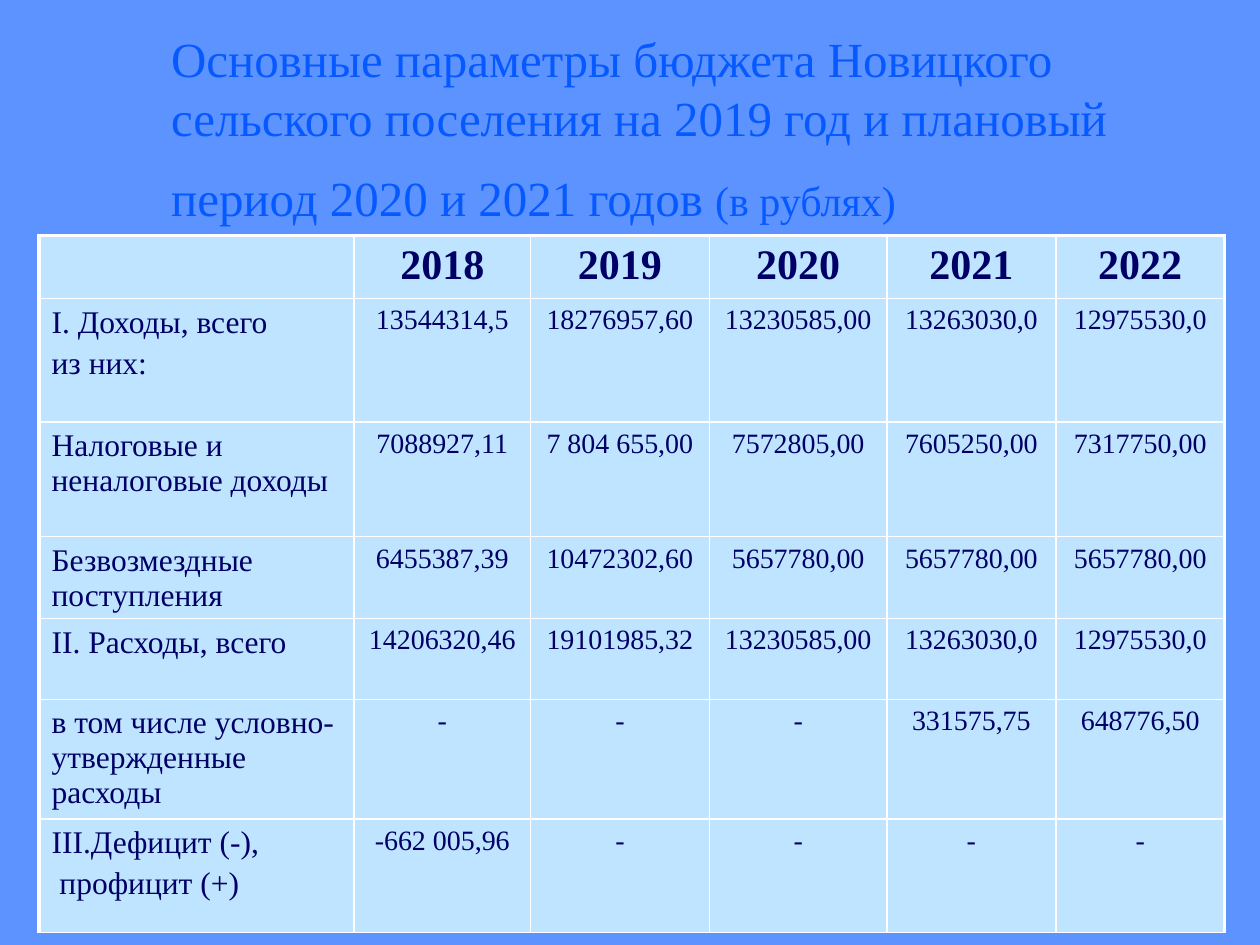
from pptx import Presentation
from pptx.dml.color import RGBColor
from pptx.enum.text import MSO_ANCHOR, PP_ALIGN
from pptx.oxml.ns import qn
from pptx.util import Inches, Pt
from lxml import etree

MIDDLE = MSO_ANCHOR.MIDDLE
LEFT, CENTER = PP_ALIGN.LEFT, PP_ALIGN.CENTER

THEME = {
    "font": "Times New Roman",
    "background": RGBColor.from_string("5D93FF"),
    "title": RGBColor.from_string("0659FF"),
    "text": RGBColor.from_string("000066"),
    "cell": RGBColor.from_string("BFE4FF"),
    "border": "FFFFFF",
    "outer": 2.25,
    "inner": 1,
    "title_size": 28,
    "unit_size": 24,
    "title_end_size": 40,
    "year_size": 24,
    "label_size": 18,
    "value_size": 16,
}

TITLE = [
    ("Основные параметры бюджета Новицкого сельского поселения "
     "на 2019 год и плановый период 2020 и 2021 годов ", "title_size"),
    ("(в рублях)", "unit_size"),
    (" ", "title_end_size"),
]
BUDGET = [
    ["", "2018", "2019", "2020", "2021", "2022"],
    ["I. Доходы, всего\nиз них:", "13544314,5", "18276957,60", "13230585,00", "13263030,0", "12975530,0"],
    ["Налоговые и неналоговые доходы", "7088927,11", "7 804 655,00", "7572805,00", "7605250,00", "7317750,00"],
    ["Безвозмездные поступления", "6455387,39", "10472302,60", "5657780,00", "5657780,00", "5657780,00"],
    ["II. Расходы, всего", "14206320,46", "19101985,32", "13230585,00", "13263030,0", "12975530,0"],
    ["в том числе условно-утвержденные расходы", "-", "-", "-", "331575,75", "648776,50"],
    ["III.Дефицит (-),\n профицит (+)", "-662 005,96", "-", "-", "-", "-"],
]
COLUMN_UNITS = [250, 140, 142, 141, 134, 134]
ROW_UNITS = [50, 98, 91, 65, 64, 94, 90]


def format_font(font, size, color, bold=False):
    values = {"name": THEME["font"], "size": Pt(THEME[size]), "bold": bold}
    for name, value in values.items():
        setattr(font, name, value)
    font.color.rgb = THEME[color]


def add_border(cell, side, width):
    line = etree.SubElement(cell._tc.get_or_add_tcPr(), qn(f"a:ln{side}"), w=str(Pt(width)))
    fill = etree.SubElement(line, qn("a:solidFill"))
    etree.SubElement(fill, qn("a:srgbClr"), val=THEME["border"])


presentation = Presentation()
presentation.slide_width, presentation.slide_height = Inches(10), Inches(7.5)
unit = presentation.slide_width // 1000
slide = presentation.slides.add_slide(presentation.slide_layouts[6])
slide.background.fill.solid()
slide.background.fill.fore_color.rgb = THEME["background"]

title = slide.shapes.add_textbox(126 * unit, 23 * unit, 852 * unit, 160 * unit)
for name, value in {"word_wrap": True, "vertical_anchor": MIDDLE}.items():
    setattr(title.text_frame, name, value)
for text, size in TITLE:
    run = title.text_frame.paragraphs[0].add_run()
    run.text = text
    format_font(run.font, size, "title")

table = slide.shapes.add_table(
    len(ROW_UNITS), len(COLUMN_UNITS), 31 * unit, 187 * unit,
    sum(COLUMN_UNITS) * unit, sum(ROW_UNITS) * unit,
).table
for name in ("first_row", "horz_banding"):
    setattr(table, name, False)
for column, units in zip(table.columns, COLUMN_UNITS):
    column.width = units * unit
for row, units in zip(table.rows, ROW_UNITS):
    row.height = units * unit

for row_index, texts in enumerate(BUDGET):
    for column_index, text in enumerate(texts):
        cell = table.cell(row_index, column_index)
        outer_sides = {
            "L": column_index == 0,
            "R": column_index == len(texts) - 1,
            "T": row_index == 0,
            "B": False,
        }
        for side, is_outer in outer_sides.items():
            add_border(cell, side, THEME["outer" if is_outer else "inner"])
        cell.fill.solid()
        cell.fill.fore_color.rgb = THEME["cell"]
        cell.margin_bottom = 0
        if not text:
            continue
        is_year, is_label = row_index == 0, column_index == 0
        size = "year_size" if is_year else "label_size" if is_label else "value_size"
        cell.text = text
        for paragraph_index, paragraph in enumerate(cell.text_frame.paragraphs):
            paragraph.alignment = LEFT if is_label else CENTER
            if paragraph_index:
                paragraph.space_before = Pt(0.2 * THEME[size])
            format_font(paragraph.runs[0].font, size, "text", bold=is_year)

presentation.save("out.pptx")
